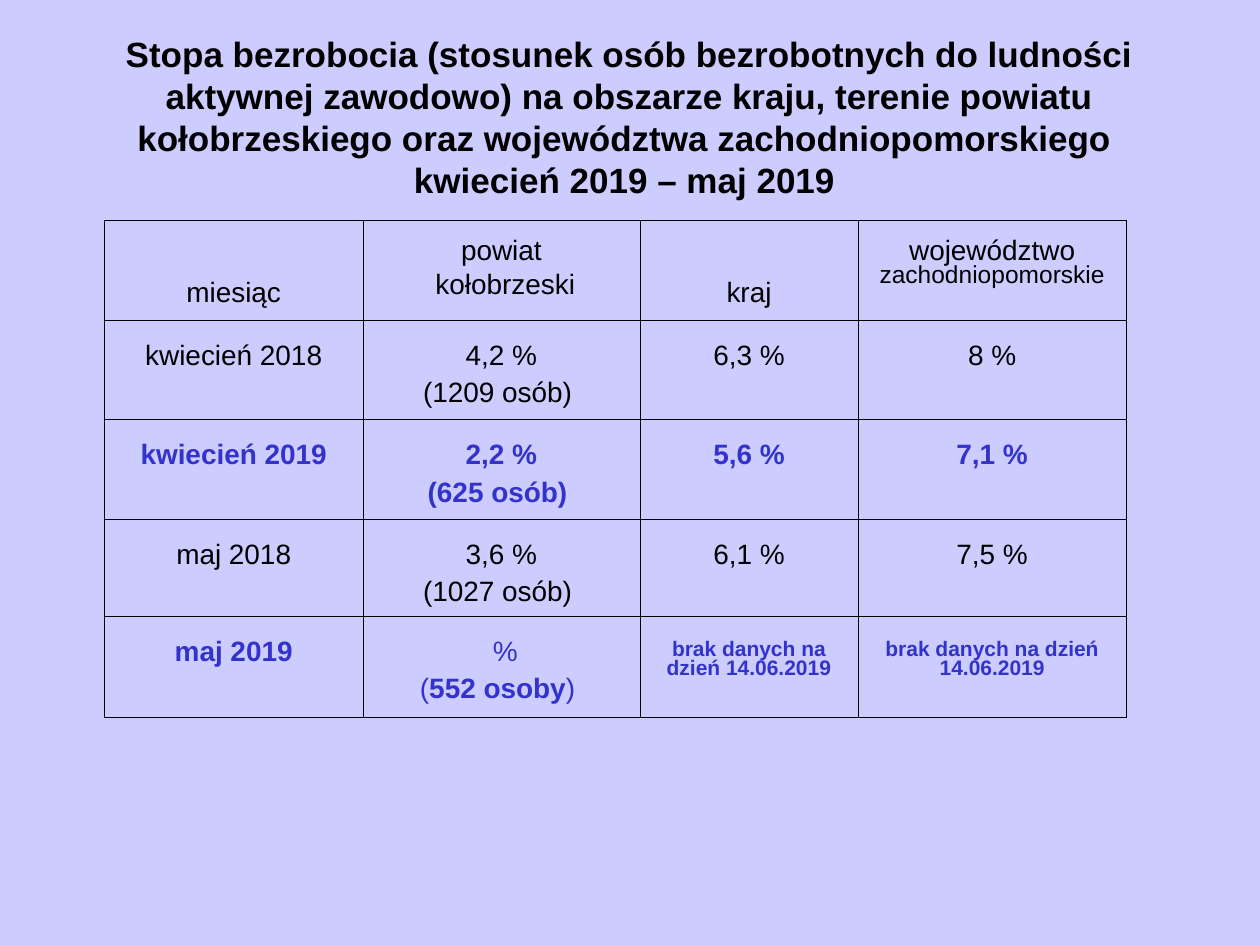
import copy
import dataclasses
import typing

import lxml.etree
import pptx
import pptx.dml.color
import pptx.enum.text
import pptx.oxml.ns
import pptx.util

Inches = pptx.util.Inches
BACKGROUND = pptx.dml.color.RGBColor(0xCC, 0xCC, 0xFF)
BLACK = pptx.dml.color.RGBColor(0, 0, 0)
BLUE = pptx.dml.color.RGBColor(0x33, 0x33, 0xCC)

COLUMN_WIDTHS = (2.05, 2.2, 1.73, 2.13)
ROW_HEIGHTS = (0.79, 0.79, 0.79, 0.77, 0.8)
OUTER_LINE = 0.23
INNER_LINE = 0.11
TITLE = (
    "Stopa bezrobocia (stosunek osób bezrobotnych do ludności aktywnej zawodowo) "
    "na obszarze kraju, terenie powiatu kołobrzeskiego oraz województwa "
    "zachodniopomorskiego \nkwiecień 2019 – maj 2019 "
)


@dataclasses.dataclass(frozen=True)
class Span:
    text: str
    size: float = 16
    bold: bool = False
    color: pptx.dml.color.RGBColor = BLACK


@dataclasses.dataclass(frozen=True)
class Entry:
    paragraphs: tuple[tuple[Span, ...], ...]
    top: float = 0.2
    bottom: float = 0.05
    space: float = 7


def entry(*lines: str, **look: typing.Any) -> Entry:
    return Entry(tuple((Span(line, **look),) for line in lines))


def header(*paragraphs: tuple[Span, ...], top: float = 0.16, bottom: float = 0.05) -> Entry:
    return Entry(paragraphs, top, bottom, 5)


def low_header(text: str) -> Entry:
    return header((Span(text),), top=0.49, bottom=0)


def month(name: str, county: str, people: str, country: str, region: str,
          **look: typing.Any) -> tuple[Entry, ...]:
    return (entry(name, **look), entry(county, people, **look),
            entry(country, **look), entry(region, **look))


STRONG = {"bold": True, "color": BLUE}
MISSING = entry("brak danych na dzień 14.06.2019", size=12, **STRONG)
ROWS = (
    (
        low_header("miesiąc"),
        header((Span("powiat"),), (Span(" kołobrzeski"),)),
        low_header("kraj"),
        header((Span("województwo "), Span("zachodniopomorskie", size=14))),
    ),
    month("kwiecień 2018", "4,2 %", "(1209 osób) ", "6,3 %", "8 %"),
    month("kwiecień 2019", "2,2 %", "(625 osób) ", "5,6 %", "7,1 %", **STRONG),
    month("maj 2018", "3,6 %", "(1027 osób) ", "6,1 %", "7,5 %"),
    (
        entry("maj 2019", **STRONG),
        Entry((
            (Span(" %", color=BLUE),),
            (Span("(", color=BLUE), Span("552 osoby", **STRONG), Span(") ", color=BLUE)),
        )),
        MISSING,
        MISSING,
    ),
)


def write(para: typing.Any, text: str, *, size: float, bold: bool,
          color: pptx.dml.color.RGBColor) -> None:
    para.alignment = pptx.enum.text.PP_ALIGN.CENTER
    for number, line in enumerate(text.split("\n")):
        if number:
            para.add_line_break()
        span = para.add_run()
        span.text = line
        span.font.name = "Arial"
        span.font.size = pptx.util.Pt(size)
        span.font.bold = bold
        span.font.color.rgb = color
        if number:
            span._r.getprevious().append(copy.deepcopy(span._r.rPr))


def set_borders(cell: typing.Any, widths: dict[str, float]) -> None:
    properties = cell._tc.get_or_add_tcPr()
    for position, (side, width) in enumerate(widths.items()):
        line = lxml.etree.Element(
            pptx.oxml.ns.qn(f"a:ln{side}"), w=str(int(pptx.util.Pt(width))))
        fill = lxml.etree.SubElement(line, pptx.oxml.ns.qn("a:solidFill"))
        lxml.etree.SubElement(fill, pptx.oxml.ns.qn("a:srgbClr"), val=str(BLACK))
        properties.insert(position, line)


def fill_cell(cell: typing.Any, content: Entry) -> None:
    cell.fill.background()
    cell.margin_left = cell.margin_right = Inches(0.1)
    cell.margin_top = Inches(content.top)
    cell.margin_bottom = Inches(content.bottom)
    frame = cell.text_frame
    for number, spans in enumerate(content.paragraphs):
        para = frame.add_paragraph() if number else frame.paragraphs[0]
        para.line_spacing = 0.81
        para.space_before = pptx.util.Pt(content.space)
        for span in spans:
            write(para, span.text, size=span.size, bold=span.bold, color=span.color)


def add_title(page: typing.Any) -> None:
    box = page.shapes.title
    box.left, box.top, box.width, box.height = map(Inches, (0.5, 0.14, 8.99, 1.57))
    frame = box.text_frame
    frame.auto_size = pptx.enum.text.MSO_AUTO_SIZE.NONE
    frame.vertical_anchor = pptx.enum.text.MSO_ANCHOR.MIDDLE
    write(frame.paragraphs[0], TITLE, size=20, bold=True, color=BLACK)


def add_rates(page: typing.Any) -> None:
    last_row, last_column = len(ROWS) - 1, len(COLUMN_WIDTHS) - 1
    table = page.shapes.add_table(
        len(ROWS), len(COLUMN_WIDTHS), Inches(0.83), Inches(1.75),
        Inches(sum(COLUMN_WIDTHS)), Inches(sum(ROW_HEIGHTS))).table
    table.first_row = table.horz_banding = False
    for column, width in zip(table.columns, COLUMN_WIDTHS):
        column.width = Inches(width)
    for r, (height, entries) in enumerate(zip(ROW_HEIGHTS, ROWS)):
        table.rows[r].height = Inches(height)
        for c, content in enumerate(entries):
            cell = table.cell(r, c)
            fill_cell(cell, content)
            edges = {"L": c == 0, "R": c == last_column, "T": r == 0, "B": r == last_row}
            set_borders(cell, {side: OUTER_LINE if outer else INNER_LINE
                               for side, outer in edges.items()})


def main() -> None:
    deck = pptx.Presentation()
    deck.slide_width, deck.slide_height = Inches(10), Inches(7.5)
    page = deck.slides.add_slide(deck.slide_layouts[5])
    page.background.fill.solid()
    page.background.fill.fore_color.rgb = BACKGROUND
    add_title(page)
    add_rates(page)
    deck.save("out.pptx")


if __name__ == "__main__":
    main()
